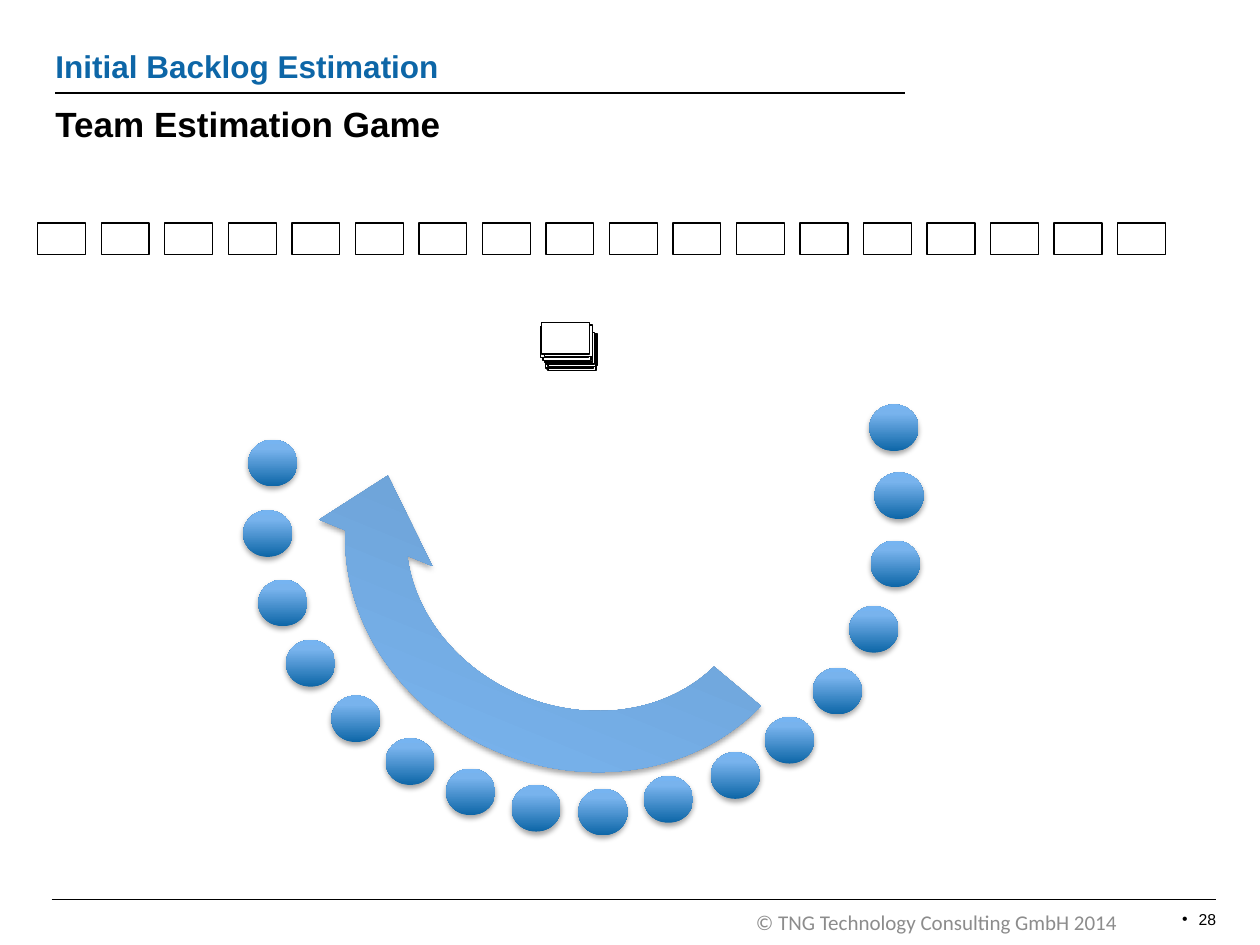
from pptx import Presentation
from pptx.dml.color import RGBColor
from pptx.enum.shapes import MSO_CONNECTOR, MSO_SHAPE
from pptx.enum.text import MSO_ANCHOR, PP_ALIGN
from pptx.oxml import parse_xml
from pptx.oxml.ns import qn
from pptx.util import Inches, Pt

LINE = MSO_CONNECTOR.STRAIGHT
CARD, PLAYER, TURN = MSO_SHAPE.RECTANGLE, MSO_SHAPE.OVAL, MSO_SHAPE.CIRCULAR_ARROW
LEFT, RIGHT = PP_ALIGN.LEFT, PP_ALIGN.RIGHT
TOP, BOTTOM = MSO_ANCHOR.TOP, MSO_ANCHOR.BOTTOM
NS = 'xmlns:a="http://schemas.openxmlformats.org/drawingml/2006/main"'

# Content
TOPIC = "Initial Backlog Estimation"
TITLE = "Team Estimation Game"
COPYRIGHT = "© TNG Technology Consulting GmbH 2014"
PAGE = "28"
CARD_COUNT = 18
# Seats of the players, clockwise from the upper right
SEATS = [
    (6.90, 3.21), (6.94, 3.75), (6.91, 4.29), (6.74, 4.81), (6.45, 5.30), (6.07, 5.69),
    (5.64, 5.97), (5.11, 6.16), (4.59, 6.26), (4.06, 6.23), (3.54, 6.10), (3.06, 5.86),
    (2.63, 5.52), (2.27, 5.08), (2.05, 4.60), (1.93, 4.05), (1.97, 3.49),
]
# Pile of unestimated cards, from bottom to top
PILE = [
    (4.36, 2.65), (4.34, 2.68), (4.35, 2.69), (4.33, 2.67), (4.35, 2.66), (4.33, 2.64),
    (4.34, 2.64), (4.32, 2.63), (4.32, 2.62), (4.31, 2.60), (4.31, 2.61), (4.29, 2.59),
    (4.32, 2.58), (4.30, 2.56),
]
RULES = [(0.41, 9.65, 7.14), (0.44, 7.18, 0.74)]  # left, right, height

# Geometry
CARD_SIZE, SEAT_SIZE = (0.38, 0.25), (0.39, 0.37)
ROW_LEFT, ROW_TOP, ROW_WIDTH = 0.30, 1.77, 8.57
ARROW_BOX, ARROW_TURN = (2.47, 2.46, 4.27, 3.88), 202.3
ARROW_SHAPE = (0.125, 11.423, 204.577, 118.598, 0.125)

THEME = {
    "ink": "000000", "paper": "FFFFFF", "accent": "0D66A7", "muted": "8C8C8C",
    "player": [(0, "0D66A7"), (80, "78B3ED"), (100, "76B4F1")],
    "arrow": [(0, "5D8AB7"), (80, "78B3ED"), (100, "76B4F1")],
    "font": "Arial", "footer_font": "Calibri",
    "title": 20, "topic": 18, "footer": 12, "page": 9,
    "rule": 1, "border": 0.75,
}


def add_rule(slide, left, right, height):
    rule = slide.shapes.add_connector(
        LINE, Inches(left), Inches(height), Inches(right), Inches(height))
    rule.line.color.rgb = RGBColor.from_string(THEME["ink"])
    rule.line.width = Pt(THEME["rule"])
    rule._element.spPr.append(parse_xml(f"<a:effectLst {NS}/>"))


def add_text(slide, box, text, size, color, font="font", bold=False,
             align=LEFT, anchor=TOP, inset=(0, 0), bullet_indent=0):
    frame = slide.shapes.add_textbox(*map(Inches, box)).text_frame
    frame.word_wrap = True
    frame.vertical_anchor = anchor
    frame.margin_left = frame.margin_right = Inches(inset[0])
    frame.margin_top = frame.margin_bottom = Inches(inset[1])
    paragraph = frame.paragraphs[0]
    paragraph.text = text
    paragraph.alignment = align
    if bullet_indent:
        properties = paragraph._p.get_or_add_pPr()
        properties.set("marL", str(Inches(bullet_indent)))
        properties.set("indent", str(-Inches(bullet_indent)))
        properties.append(parse_xml(f'<a:buFont {NS} typeface="Arial"/>'))
        properties.append(parse_xml(f'<a:buChar {NS} char="•"/>'))
    style = paragraph.runs[0].font
    style.name, style.size, style.bold = THEME[font], Pt(THEME[size]), bold
    style.color.rgb = RGBColor.from_string(THEME[color])


def add_card(slide, left, top):
    card = slide.shapes.add_shape(CARD, *map(Inches, (left, top, *CARD_SIZE)))
    card.shadow.inherit = False
    card.fill.solid()
    card.fill.fore_color.rgb = RGBColor.from_string(THEME["paper"])
    card.line.color.rgb = RGBColor.from_string(THEME["ink"])
    card.line.width = Pt(THEME["border"])


def add_glossy(slide, kind, box, stops):
    """Add a borderless shape with an upward gradient and a soft shadow."""
    shape = slide.shapes.add_shape(kind, *map(Inches, box))
    shape.line.fill.background()
    shape.shadow.inherit = False
    shape.fill.gradient()
    properties = shape._element.spPr
    colors = "".join(
        f'<a:gs pos="{share * 1000}"><a:srgbClr val="{color}"/></a:gs>'
        for share, color in THEME[stops])
    properties.replace(properties.find(qn("a:gradFill")), parse_xml(
        f'<a:gradFill {NS} rotWithShape="1"><a:gsLst>{colors}</a:gsLst>'
        '<a:lin ang="16200000" scaled="0"/></a:gradFill>'))
    properties.find(qn("a:effectLst")).append(parse_xml(
        f'<a:outerShdw {NS} blurRad="{Pt(3.1)}" dist="{Pt(1.8)}" dir="5400000" '
        'rotWithShape="0"><a:srgbClr val="000000"><a:alpha val="35000"/>'
        '</a:srgbClr></a:outerShdw>'))
    return shape


def main():
    deck = Presentation()
    deck.slide_width, deck.slide_height = Inches(10), Inches(7.5)
    slide = deck.slides.add_slide(deck.slide_layouts[6])

    # Header and footer
    for rule in RULES:
        add_rule(slide, *rule)
    add_text(slide, (6, 7.22, 3.26, 0.2), COPYRIGHT, "footer", "muted", font="footer_font")
    add_text(slide, (9.28, 7.17, 0.47, 0.25), PAGE, "page", "ink",
             align=RIGHT, inset=(0.1, 0.05), bullet_indent=0.13)
    add_text(slide, (0.44, 0.81, 6.77, 0.34), TITLE, "title", "ink", bold=True)
    add_text(slide, (0.44, 0.37, 6.75, 0.3), TOPIC, "topic", "accent",
             bold=True, anchor=BOTTOM)

    # Row of laid-out cards
    pitch = ROW_WIDTH / (CARD_COUNT - 1)
    for column in range(CARD_COUNT):
        add_card(slide, ROW_LEFT + column * pitch, ROW_TOP)

    # Players and the direction of play
    for seat in SEATS:
        add_glossy(slide, PLAYER, (*seat, *SEAT_SIZE), "player")
    arrow = add_glossy(slide, TURN, ARROW_BOX, "arrow")
    arrow.rotation = ARROW_TURN
    for index, value in enumerate(ARROW_SHAPE):
        arrow.adjustments[index] = value

    # Card pile
    for corner in PILE:
        add_card(slide, *corner)

    deck.save("out.pptx")


if __name__ == "__main__":
    main()
